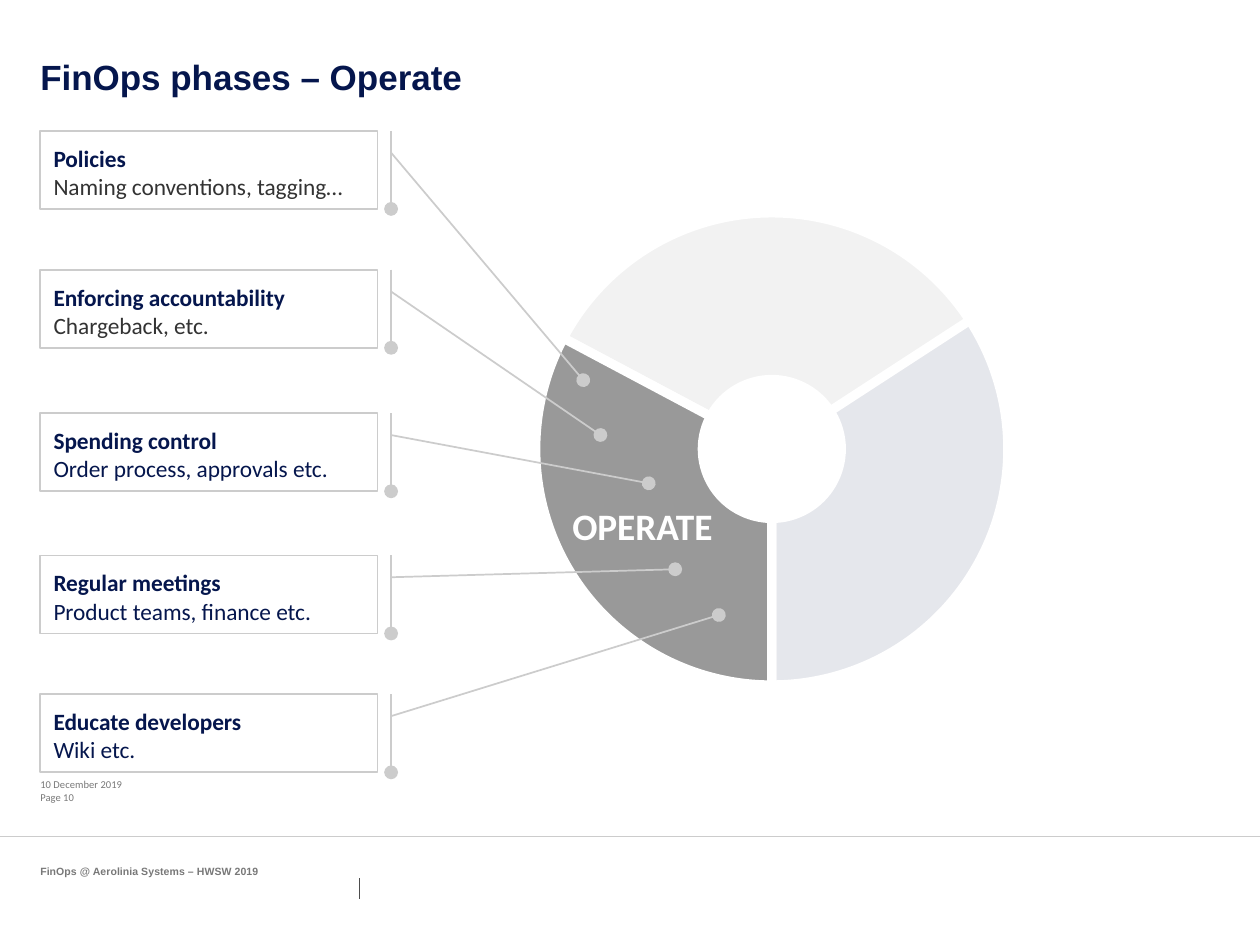
from lxml import etree
from pptx import Presentation
from pptx.dml.color import RGBColor
from pptx.enum.shapes import MSO_CONNECTOR, MSO_SHAPE
from pptx.enum.text import MSO_ANCHOR, PP_ALIGN
from pptx.oxml.ns import qn
from pptx.util import Cm, Pt

NAVY = RGBColor(0x05, 0x16, 0x4D)
DARK = RGBColor(0x33, 0x33, 0x33)
TICK = RGBColor(0x4D, 0x4D, 0x4D)
FOOTER = RGBColor(0x78, 0x78, 0x78)
GREY = RGBColor(0x99, 0x99, 0x99)
SILVER = RGBColor(0xCC, 0xCC, 0xCC)
PALE = RGBColor(0xF2, 0xF2, 0xF2)
WHITE = RGBColor(0xFF, 0xFF, 0xFF)

LEFT = 0.61
BOX_W, BOX_H = 5.1, 1.18
WHEEL_X, WHEEL_Y = 11.67, 6.79

# Heading, detail, detail colour, box top and pointer target (cm)
TOPICS = [
    ("Policies", "Naming conventions, tagging…", DARK, 1.98, (8.82, 5.75)),
    ("Enforcing accountability", "Chargeback, etc.", DARK, 4.08, (9.08, 6.58)),
    ("Spending control", "Order process, approvals etc.", NAVY, 6.25, (9.81, 7.31)),
    ("Regular meetings", "Product teams, finance etc.", NAVY, 8.4, (10.21, 8.61)),
    ("Educate developers", "Wiki etc.", NAVY, 10.5, (10.87, 9.3)),
]


def add_run(p, text, size, color, bold=False, font="Calibri"):
    r = p.add_run()
    r.text = text
    r.font.name = font
    r.font.size = Pt(size)
    r.font.bold = bold
    r.font.color.rgb = color


def set_insets(tf, inset):
    tf.margin_left = tf.margin_right = Cm(inset)
    tf.margin_top = tf.margin_bottom = Cm(inset)


def add_label(slide, x, y, w, h, text, size, color, bold=False, font="Calibri",
              anchor=MSO_ANCHOR.MIDDLE, align=PP_ALIGN.LEFT, wrap=True):
    tf = slide.shapes.add_textbox(Cm(x), Cm(y), Cm(w), Cm(h)).text_frame
    set_insets(tf, 0)
    tf.word_wrap = wrap
    tf.vertical_anchor = anchor
    p = tf.paragraphs[0]
    p.alignment = align
    add_run(p, text, size, color, bold, font)


def add_rule(slide, x1, y1, x2, y2, color):
    line = slide.shapes.add_connector(
        MSO_CONNECTOR.STRAIGHT, Cm(x1), Cm(y1), Cm(x2), Cm(y2))
    line.line.color.rgb = color
    line.line.width = Pt(0.5)
    etree.SubElement(line._element.spPr, qn("a:effectLst"))


def add_round(slide, kind, radius, color):
    """Add a shape centred on the wheel, with a white outline."""
    sp = slide.shapes.add_shape(kind, Cm(WHEEL_X - radius), Cm(WHEEL_Y - radius),
                                Cm(2 * radius), Cm(2 * radius))
    sp.shadow.inherit = False
    sp.fill.solid()
    sp.fill.fore_color.rgb = color
    sp.line.color.rgb = WHITE
    sp.line.width = Pt(4)
    return sp


def add_wedge(slide, start, end, color, opacity=100):
    """Add a wheel sector; angles run clockwise in degrees from the right."""
    sp = add_round(slide, MSO_SHAPE.PIE, 3.57, color)
    for i, angle in enumerate((start, end)):
        sp.adjustments[i] = angle * 0.6
    if opacity < 100:
        clr = sp._element.spPr.find(qn("a:solidFill"))[0]
        etree.SubElement(clr, qn("a:alpha"), val=str(opacity * 1000))


def add_callout(slide, heading, detail, detail_color, top, target):
    sp = slide.shapes.add_shape(MSO_SHAPE.LINE_CALLOUT_1_BORDER_AND_ACCENT_BAR,
                                Cm(LEFT), Cm(top), Cm(BOX_W), Cm(BOX_H))
    sp.shadow.inherit = False
    sp.fill.background()
    sp.line.color.rgb = SILVER
    sp.line.width = Pt(0.75)
    etree.SubElement(sp.line._get_or_add_ln(), qn("a:tailEnd"), type="oval")

    # Pointer from the accent bar to its target on the wheel
    x, y = target
    pointer = (0.28, 1.04, (y - top) / BOX_H, (x - LEFT) / BOX_W)
    for i, value in enumerate(pointer):
        sp.adjustments[i] = value

    tf = sp.text_frame
    set_insets(tf, 0.2)
    tf.word_wrap = True
    tf.vertical_anchor = MSO_ANCHOR.TOP
    p = tf.paragraphs[0]
    p.alignment = PP_ALIGN.LEFT
    add_run(p, heading, 10, NAVY, bold=True)
    p = tf.add_paragraph()
    p.alignment = PP_ALIGN.LEFT
    add_run(p, detail, 10, detail_color)


def main():
    prs = Presentation()
    prs.slide_width, prs.slide_height = Cm(19.05), Cm(14.29)
    slide = prs.slides.add_slide(prs.slide_layouts[6])

    # Title
    add_label(slide, LEFT, 0.84, 17.7, 1.6, "FinOps phases – Operate", 15, NAVY,
              bold=True, font="Arial", anchor=MSO_ANCHOR.TOP)

    # Footer
    add_rule(slide, 5.44, 13.28, 5.44, 13.59, TICK)
    add_rule(slide, 0, 12.65, 19.05, 12.65, SILVER)
    add_label(slide, LEFT, 11.76, 1.35, 0.2, "10 December 2019", 4.5, FOOTER, wrap=False)
    add_label(slide, LEFT, 11.96, 0.56, 0.2, "Page 10", 4.5, FOOTER, wrap=False)
    add_label(slide, LEFT, 13.08, 4.5, 0.2, "FinOps @ Aerolinia Systems – HWSW 2019",
              4.5, FOOTER, bold=True, font="Arial")

    # Phase wheel
    add_wedge(slide, 299, 90, NAVY, opacity=10)
    add_wedge(slide, 208, 327, PALE)
    add_wedge(slide, 90, 208, GREY)
    add_round(slide, MSO_SHAPE.OVAL, 1.05, WHITE)
    add_label(slide, 8.23, 7.5, 2.97, 0.9, "OPERATE", 16, WHITE, bold=True,
              align=PP_ALIGN.CENTER, wrap=False)

    # Topics pointing at the Operate phase
    for topic in TOPICS:
        add_callout(slide, *topic)

    prs.save("out.pptx")


if __name__ == "__main__":
    main()
